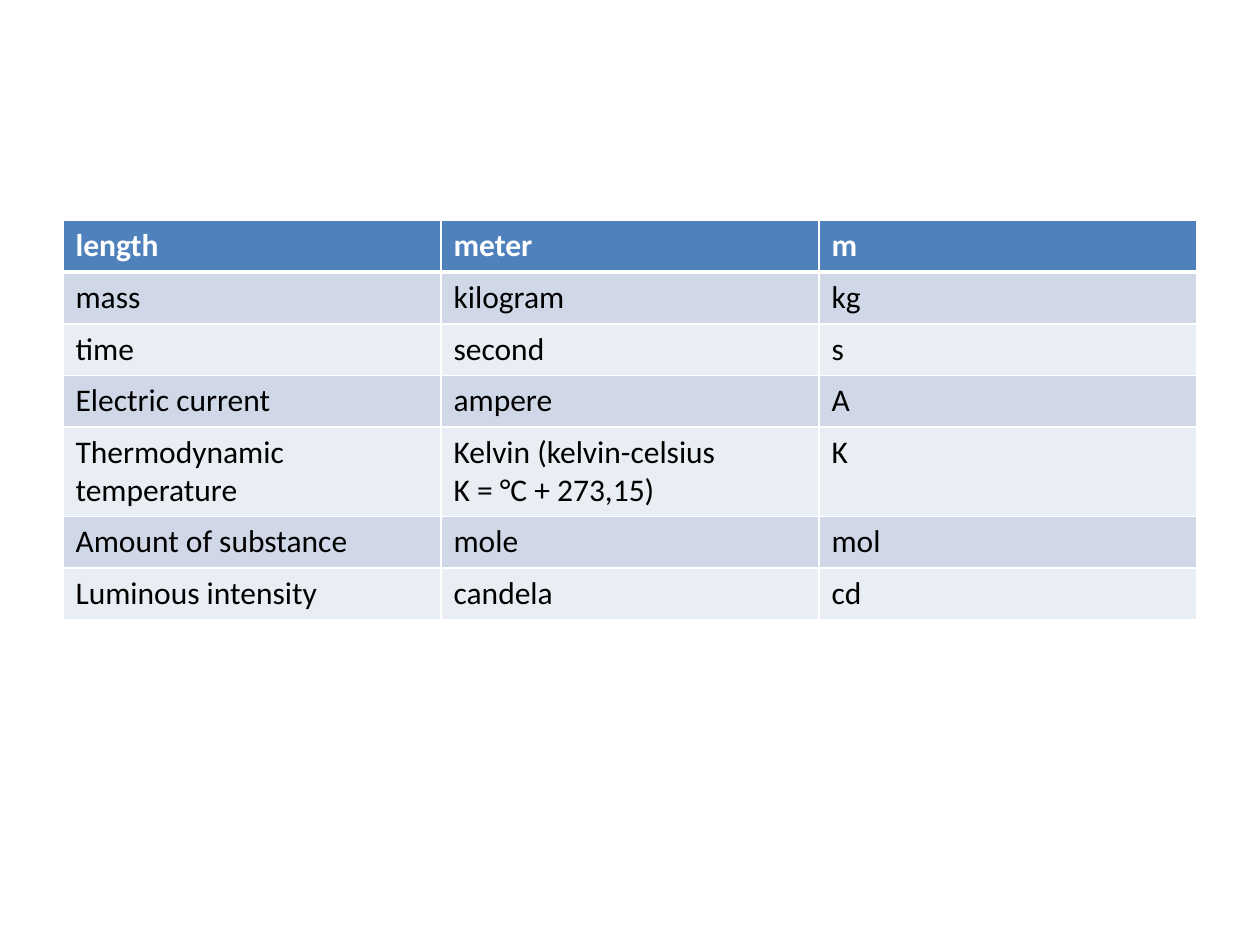
from pptx import Presentation
from pptx.dml.color import RGBColor as Color
from pptx.oxml.ns import qn
from pptx.util import Inches, Pt
from lxml.etree import SubElement as Sub

WHITE = RGB = Color(0xFF, 0xFF, 0xFF)
BLACK = Color(0, 0, 0)
BLUE = Color(0x4F, 0x81, 0xBD)
DARK = Color(0xD0, 0xD8, 0xE8)
LIGHT = Color(0xE9, 0xED, 0xF4)

UNITS = [
    ("length", "meter", "m"),
    ("mass", "kilogram", "kg"),
    ("time", "second", "s"),
    ("Electric current", "ampere", "A"),
    ("Thermodynamic temperature",
     "Kelvin (kelvin-celsius\nK = °C + 273,15)", "K"),
    ("Amount of substance", "mole", "mol"),
    ("Luminous intensity", "candela", "cd"),
]


def add_edge(cell, side, width):
    props = cell._tc.get_or_add_tcPr()
    line = Sub(props, qn(f"a:ln{side}"), w=str(Pt(width)))
    fill = Sub(line, qn("a:solidFill"))
    Sub(fill, qn("a:srgbClr"), val=str(WHITE))


def add_text(cell, text, head):
    frame = cell.text_frame
    for i, part in enumerate(text.split("\n")):
        para = frame.add_paragraph() if i else frame.paragraphs[0]
        run = para.add_run()
        run.text = part
        font = run.font
        font.name = "Calibri"
        font.size = Pt(18)
        font.bold = head
        font.color.rgb = WHITE if head else BLACK


def fill_cell(cell, text, row):
    head = row == 0
    thick = {"B": 3} if head else {"T": 3} if row == 1 else {}
    for side in "LRTB":
        add_edge(cell, side, thick.get(side, 1))
    cell.fill.solid()
    cell.fill.fore_color.rgb = BLUE if head else DARK if row % 2 else LIGHT
    add_text(cell, text, head)


def add_units(slide):
    high = Inches(0.41)
    frame = slide.shapes.add_table(
        len(UNITS), 3, Inches(0.5), Inches(1.75), Inches(9), high * len(UNITS))
    table = frame.table
    for col in table.columns:
        col.width = Inches(3)
    for r, unit in enumerate(UNITS):
        table.rows[r].height = high
        for c, text in enumerate(unit):
            fill_cell(table.cell(r, c), text, r)


def main():
    deck = Presentation()
    deck.slide_width = Inches(10)
    deck.slide_height = Inches(7.5)
    slide = deck.slides.add_slide(deck.slide_layouts[6])
    add_units(slide)
    deck.save("out.pptx")


if __name__ == "__main__":
    main()
